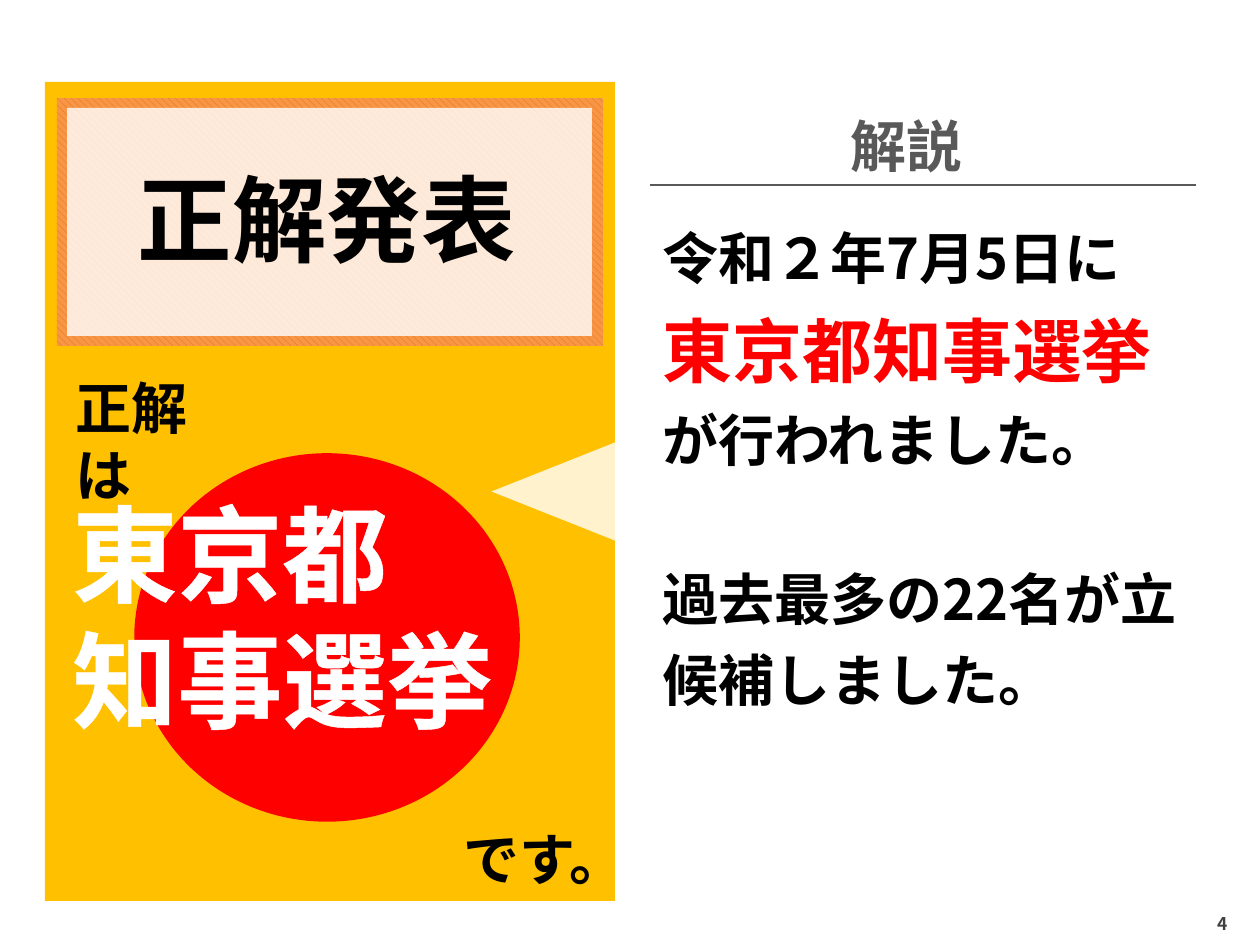
"""Build the answer slide: a yellow answer card beside its commentary."""
from collections import namedtuple
from lxml.etree import SubElement
from pptx import Presentation
from pptx.dml.color import RGBColor
from pptx.enum.dml import MSO_PATTERN
from pptx.enum.shapes import MSO_CONNECTOR, MSO_SHAPE
from pptx.enum.text import MSO_ANCHOR, MSO_AUTO_SIZE, PP_ALIGN
from pptx.oxml.ns import qn
from pptx.util import Pt

Theme = namedtuple("Theme", "font black white red gold orange rust gray dark title huge large body small")
theme = Theme(
    "Noto Sans CJK JP",
    *map(RGBColor.from_string, ("000000", "FFFFFF", "FF0000", "FFC000", "F79646", "E46C0A", "595959", "404040")),
    54, 60, 40, 32, 10,
)
PX = 914400 / 126


def draw(kind, frame, color, alpha=100):
    shape = shapes.add_shape(kind, *(round(n * PX) for n in frame))
    shape.shadow.inherit = False
    shape.line.fill.background()
    shape.fill.solid()
    shape.fill.fore_color.rgb = color
    if alpha < 100:
        tint = next(shape.element.spPr.iter(qn("a:srgbClr")))
        SubElement(tint, qn("a:alpha"), val=str(alpha * 1000))
    return shape


def write(box, frame, lines, wrap=False, align=PP_ALIGN.LEFT):
    box.left, box.top, box.width, box.height = (round(n * PX) for n in frame)
    text = box.text_frame
    text.auto_size = MSO_AUTO_SIZE.NONE
    text.word_wrap = wrap
    text.vertical_anchor = MSO_ANCHOR.TOP
    text.text = "\n".join(line[0] for line in lines)
    for para, (_, size, color) in zip(text.paragraphs, lines):
        para.alignment = align
        font = para.runs[0].font
        font.size = Pt(size)
        font.bold = True
        font.color.rgb = color
        font.name = theme.font
    for props in box.element.iter(qn("a:rPr")):
        SubElement(props, qn("a:ea"), typeface=theme.font)
    return text


deck = Presentation()
deck.slide_width, deck.slide_height = round(1260 * PX), round(945 * PX)
slide = deck.slides.add_slide(deck.slide_layouts[5])
shapes = slide.shapes

draw(MSO_SHAPE.RECTANGLE, (45, 82, 570, 819), theme.gold)
frame = draw(MSO_SHAPE.RECTANGLE, (57, 98, 546, 248), theme.orange)
frame.fill.patterned()
frame.fill.pattern = MSO_PATTERN.WIDE_DOWNWARD_DIAGONAL
frame.fill.fore_color.rgb = theme.rust
frame.fill.back_color.rgb = theme.orange
draw(MSO_SHAPE.RECTANGLE, (67, 108, 525, 228), theme.white, 80)
arrow = draw(MSO_SHAPE.ISOSCELES_TRIANGLE, (508, 411, 128, 161), theme.white, 80)
arrow.rotation = 270
disc = draw(MSO_SHAPE.OVAL, (136, 455, 382, 365), theme.red)
disc.line.color.rgb = theme.red
disc.line.width = Pt(2)

title = shapes.title
title.element.getparent().append(title.element)
write(title, (123, 155, 407, 127), [("正解発表", theme.title, theme.black)], align=PP_ALIGN.CENTER)

labels = [
    ("正解は", (63, 367, 189, 81), theme.black, True),
    ("です。", (451, 818, 161, 81), theme.black, False),
    ("解説", (838, 105, 139, 81), theme.gray, False),
]
for label, place, color, wrap in labels:
    write(shapes.add_textbox(0, 0, 0, 0), place, [(label, theme.body, color)], wrap)

rule = shapes.add_connector(MSO_CONNECTOR.STRAIGHT, *(round(n * PX) for n in (650, 185, 1196, 185)))
rule.line.color.rgb = theme.gray
rule.line.width = Pt(0.75)
SubElement(rule.element.spPr, qn("a:effectLst"))

notes = [
    ("令和２年7月5日に", theme.body, theme.black),
    ("東京都知事選挙", theme.large, theme.red),
    ("が行われました。", theme.body, theme.black),
    ("過去最多の22名が立候補しました。", theme.body, theme.black),
]
body = write(shapes.add_textbox(0, 0, 0, 0), (650, 204, 546, 522), notes, True)
for para in body.paragraphs:
    para.line_spacing = 1.2
body.paragraphs[-1].space_before = Pt(45)

reply = shapes.add_textbox(0, 0, 0, 0)
words = [(word, theme.huge, theme.white) for word in ("東京都", "知事選挙")]
write(reply, (60, 483, 530, 267), words, True, PP_ALIGN.JUSTIFY)
for props in reply.element.iter(qn("a:rPr")):
    line = SubElement(props, qn("a:ln"), w=str(Pt(1.5)))
    fill = SubElement(line, qn("a:solidFill"))
    SubElement(fill, qn("a:srgbClr"), val=str(theme.white))
    props.insert(0, line)

page = shapes.add_textbox(0, 0, 0, 0)
text = write(page, (1186, 901, 74, 44), [("4", theme.small, theme.dark)], align=PP_ALIGN.CENTER)
text.vertical_anchor = MSO_ANCHOR.MIDDLE
text.margin_left = text.margin_right = text.margin_top = text.margin_bottom = round(5 * PX)

deck.save("out.pptx")
